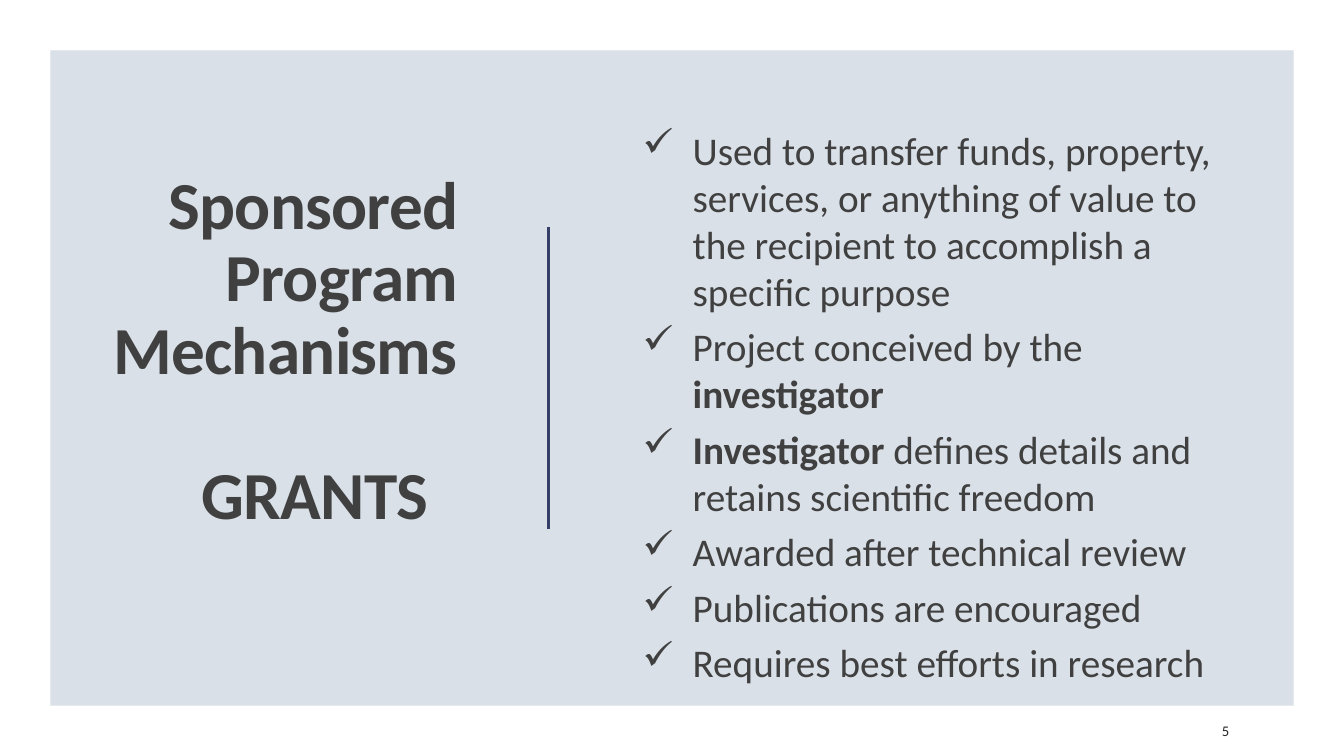
from lxml import etree
from pptx import Presentation
from pptx.dml.color import RGBColor
from pptx.enum.shapes import MSO_CONNECTOR, MSO_SHAPE
from pptx.enum.text import MSO_ANCHOR, MSO_AUTO_SIZE, PP_ALIGN
from pptx.oxml.ns import qn
from pptx.util import Inches, Pt

RECT = MSO_SHAPE.RECTANGLE
LINE = MSO_CONNECTOR.STRAIGHT
MIDDLE, TOP = MSO_ANCHOR.MIDDLE, MSO_ANCHOR.TOP
RIGHT, LEFT = PP_ALIGN.RIGHT, PP_ALIGN.LEFT
FIXED = MSO_AUTO_SIZE.NONE

WIDE, HIGH = 13.33, 7.5
EDGE = 0.5
FONT = "Calibri"
HUES = {"panel": "D9E0E7", "page": "FFFFFF", "text": "404040",
        "rule": "344068", "foot": "262626"}

# Each item is a list of (text, bold) runs
ITEMS = [
    [("Used to transfer funds, property, services, or anything of value "
      "to the recipient to accomplish a specific purpose", False)],
    [("Project conceived by the ", False), ("investigator", True)],
    [("Investigator", True),
     (" defines details and retains scientific freedom", False)],
    [("Awarded after technical review", False)],
    [("Publications are encouraged", False)],
    [("Requires best efforts in research", False)],
]


def hue(name):
    return RGBColor.from_string(HUES[name])


def put(target, values):
    for name, value in values.items():
        setattr(target, name, value)


def place(shape, left, top, width, height):
    put(shape, {"left": Inches(left), "top": Inches(top),
                "width": Inches(width), "height": Inches(height)})


def add_rect(slide, color, inset):
    rect = slide.shapes.add_shape(
        RECT, Inches(inset), Inches(inset),
        Inches(WIDE - 2 * inset), Inches(HIGH - 2 * inset))
    rect.shadow.inherit = False
    rect.fill.solid()
    rect.fill.fore_color.rgb = hue(color)
    rect.line.fill.background()


def add_rule(slide, x, top, end):
    rule = slide.shapes.add_connector(
        LINE, Inches(x), Inches(top), Inches(x), Inches(end))
    rule.line.color.rgb = hue("rule")
    rule.line.width = Pt(1.5)
    etree.SubElement(rule._element.spPr, qn("a:effectLst"))


def add_run(para, text, size, bold=False, color="text"):
    run = para.add_run()
    run.text = text
    put(run.font, {"name": FONT, "size": Pt(size), "bold": bold})
    run.font.color.rgb = hue(color)
    return run


def set_frame(shape, anchor, **extra):
    frame = shape.text_frame
    put(frame, {"word_wrap": True, "auto_size": FIXED,
                "vertical_anchor": anchor, **extra})
    return frame


def set_bullet(para):
    props = para._p.get_or_add_pPr()
    props.set("marL", str(Inches(1)))
    props.set("indent", str(Inches(-0.5)))
    font = etree.SubElement(props, qn("a:buFont"))
    font.set("typeface", "Wingdings")
    etree.SubElement(props, qn("a:buChar")).set("char", "ü")


def fill_title(shape):
    place(shape, EDGE, 0.8, 4.14, 5.4)
    frame = set_frame(shape, MIDDLE)
    head, kind = frame.paragraphs[0], frame.add_paragraph()
    for para, text in ((head, "Sponsored Program Mechanisms"),
                       (kind, "GRANTS")):
        put(para, {"alignment": RIGHT, "line_spacing": 0.9})
        run = add_run(para, text, 48, True)
        run._r.get_or_add_rPr().set("spc", "-50")
    # One empty line's height above, and a small step in from the right
    kind.space_before = Pt(52)
    kind._p.get_or_add_pPr().set("marR", str(Inches(0.29)))


def fill_list(shape):
    place(shape, 5.87, 1.2, 6.53, 5.4)
    frame = set_frame(shape, TOP, margin_left=0, margin_right=0)
    for i, runs in enumerate(ITEMS):
        para = frame.add_paragraph() if i else frame.paragraphs[0]
        put(para, {"level": 1, "alignment": LEFT, "line_spacing": 1.0,
                   "space_before": Pt(0), "space_after": Pt(6)})
        set_bullet(para)
        for text, bold in runs:
            add_run(para, text, 28, bold)


def add_number(slide, text):
    box = slide.shapes.add_textbox(0, 0, 0, 0)
    place(box, 12.02, 7.05, 0.85, 0.4)
    frame = set_frame(box, MIDDLE)
    add_run(frame.paragraphs[0], text, 10.5, color="foot")


def main():
    deck = Presentation()
    put(deck, {"slide_width": Inches(WIDE), "slide_height": Inches(HIGH)})
    slide = deck.slides.add_slide(deck.slide_layouts[1])
    title, body = slide.placeholders
    tree = slide.shapes._spTree

    # Backdrop
    slide.background.fill.solid()
    slide.background.fill.fore_color.rgb = hue("panel")
    add_rect(slide, "page", 0)
    add_rect(slide, "panel", EDGE)

    # Title, rule and list, in front of the backdrop
    fill_title(title)
    tree.append(title._element)
    add_rule(slide, 5.44, HIGH * 0.3, HIGH * 0.7)
    fill_list(body)
    tree.append(body._element)

    # Page number
    add_number(slide, "5")
    deck.save("out.pptx")


if __name__ == "__main__":
    main()
